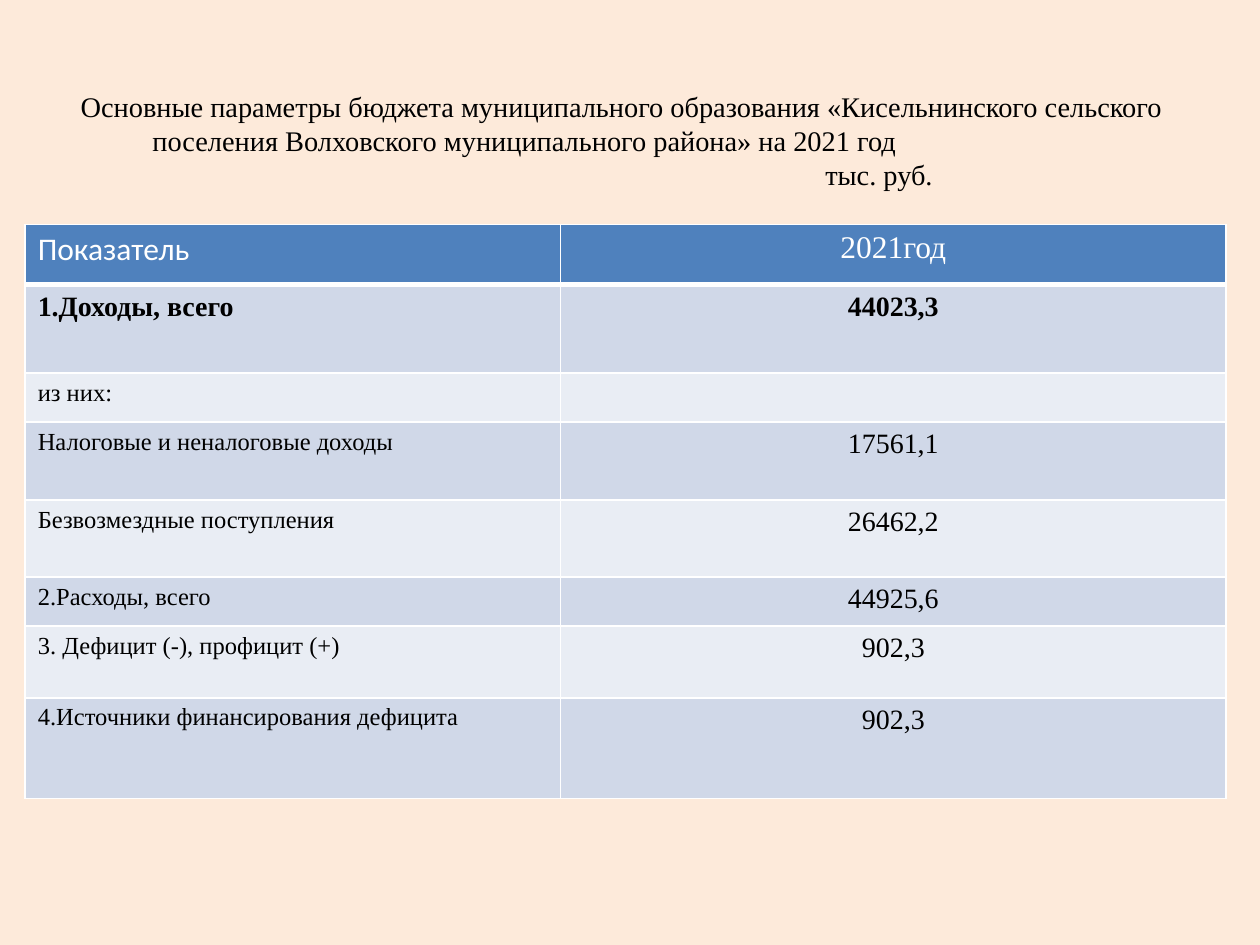
from dataclasses import dataclass

from lxml import etree
from pptx import Presentation
from pptx.dml.color import RGBColor
from pptx.enum.text import MSO_ANCHOR, MSO_AUTO_SIZE, PP_ALIGN
from pptx.oxml.ns import qn
from pptx.util import Inches, Pt

LEFT, CENTER = PP_ALIGN.LEFT, PP_ALIGN.CENTER


@dataclass(frozen=True)
class Theme:
    background: RGBColor = RGBColor.from_string("FDEADA")
    header: RGBColor = RGBColor.from_string("4F81BD")
    odd_row: RGBColor = RGBColor.from_string("D0D8E8")
    even_row: RGBColor = RGBColor.from_string("E9EDF4")
    dark: RGBColor = RGBColor.from_string("000000")
    light: RGBColor = RGBColor.from_string("FFFFFF")
    serif: str = "Times New Roman"
    sans: str = "Calibri"
    title_size: float = 16.2
    header_size: int = 18
    value_size: int = 16
    label_size: int = 14


theme = Theme()


def style_paragraph(paragraph, size, color, alignment, bold=False, name=theme.serif):
    paragraph.alignment = alignment
    paragraph.font.size = Pt(size)
    paragraph.font.color.rgb = color
    paragraph.font.bold = bold
    paragraph.font.name = name


def add_border(cell, side, width):
    """Draw one side of a cell; call before the cell is filled."""
    line = etree.SubElement(cell._tc.get_or_add_tcPr(), qn(f"a:ln{side}"), w=str(Pt(width)))
    fill = etree.SubElement(line, qn("a:solidFill"))
    etree.SubElement(fill, qn("a:srgbClr"), val=str(theme.light))


presentation = Presentation()
presentation.slide_width = Inches(10)
presentation.slide_height = Inches(7.5)
slide = presentation.slides.add_slide(presentation.slide_layouts[5])
slide.background.fill.solid()
slide.background.fill.fore_color.rgb = theme.background

# Title: each line has its own indent
title = slide.shapes.title
title.left, title.top = Inches(0.43), Inches(0.52)
title.width, title.height = Inches(9), Inches(1.18)
title_frame = title.text_frame
title_frame.auto_size = MSO_AUTO_SIZE.NONE
title_frame.vertical_anchor = MSO_ANCHOR.MIDDLE
title_lines = [
    ("Основные параметры бюджета муниципального образования «Кисельнинского сельского", 0, CENTER),
    ("поселения Волховского муниципального района» на 2021 год", 0.68, LEFT),
    ("тыс. руб.", 6.02, LEFT),
]
title_frame.text = "\n".join(text for text, _, _ in title_lines)
for paragraph, (_, indent, alignment) in zip(title_frame.paragraphs, title_lines):
    style_paragraph(paragraph, theme.title_size, theme.dark, alignment)
    paragraph.line_spacing = Pt(19.4)
    paragraph._p.get_or_add_pPr().set("marL", str(Inches(indent)))

# Budget table: label, value, row height
budget_rows = [
    ("Показатель", "2021год", 0.48),
    ("1.Доходы, всего", "44023,3", 0.7),
    ("из них:", "", 0.39),
    ("Налоговые и неналоговые доходы", "17561,1", 0.62),
    ("Безвозмездные поступления", "26462,2", 0.61),
    ("2.Расходы, всего", "44925,6", 0.39),
    ("3. Дефицит (-), профицит (+)", "902,3", 0.57),
    ("4.Источники финансирования дефицита", "902,3", 0.8),
]
table = slide.shapes.add_table(
    len(budget_rows), 2, Inches(0.2), Inches(1.78), Inches(9.53), Inches(4.56)
).table
table.columns[0].width = Inches(4.25)
table.columns[1].width = Inches(5.28)

for row_index, (label, value, height) in enumerate(budget_rows):
    table.rows[row_index].height = Inches(height)
    is_header = row_index == 0
    is_total = row_index == 1
    if is_header:
        row_fill = theme.header
    else:
        row_fill = theme.odd_row if row_index % 2 else theme.even_row

    for column_index, text in enumerate((label, value)):
        is_label = column_index == 0
        cell = table.cell(row_index, column_index)
        cell.text = text
        if is_header:
            size = theme.header_size
        else:
            size = theme.label_size if is_label and not is_total else theme.value_size
        style_paragraph(
            cell.text_frame.paragraphs[0],
            size,
            theme.light if is_header else theme.dark,
            LEFT if is_label else CENTER,
            bold=is_total,
            name=theme.sans if is_header and is_label else theme.serif,
        )
        for side in "LRTB":
            thick = (is_header and side == "B") or (is_total and side == "T")
            add_border(cell, side, 3 if thick else 1)
        cell.fill.solid()
        cell.fill.fore_color.rgb = row_fill

presentation.save("out.pptx")
